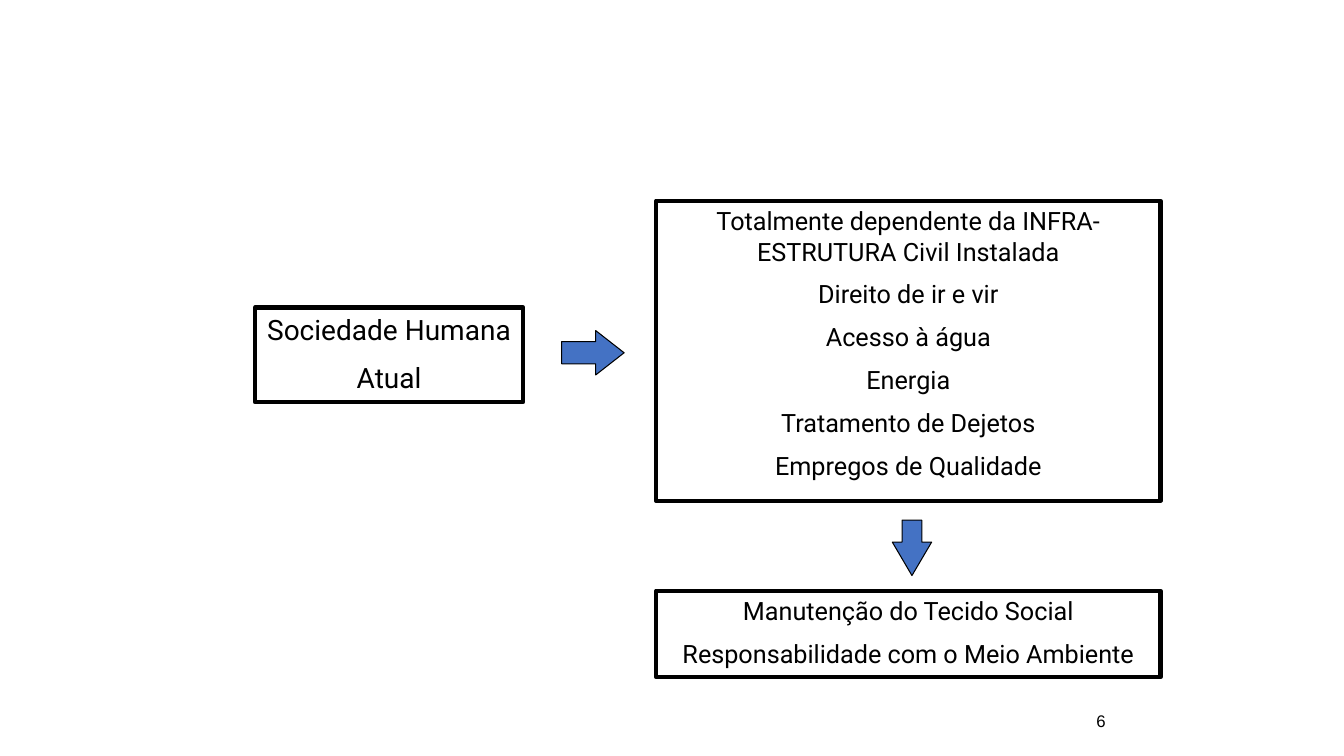
import pptx
import pptx.util
import pptx.dml.color
import pptx.enum.shapes
import pptx.enum.text

Inches = pptx.util.Inches
Pt = pptx.util.Pt
SHAPES = pptx.enum.shapes.MSO_SHAPE
ANCHOR = pptx.enum.text.MSO_ANCHOR

BLACK = "000000"
BLUE = "4472C4"


def color(value):
    """Turn a hex string into a colour."""
    return pptx.dml.color.RGBColor.from_string(value)


def write_text(box, lines, size, font="Roboto", anchor=ANCHOR.TOP):
    """Write centred paragraphs, half a line apart, into a box."""
    frame = box.text_frame
    frame.word_wrap = True
    frame.vertical_anchor = anchor
    for index, line in enumerate(lines):
        para = frame.paragraphs[0] if index == 0 else frame.add_paragraph()
        para.alignment = pptx.enum.text.PP_ALIGN.CENTER
        if index:
            para.space_before = Pt(size / 2)
        span = para.add_run()
        span.text = line
        span.font.name = font
        span.font.size = Pt(size)
        span.font.color.rgb = color(BLACK)


def add_outlined(page, kind, area, line_width, fill=None):
    """Draw a black-outlined shape in the given area."""
    shape = page.shapes.add_shape(kind, *map(Inches, area))
    shape.shadow.inherit = False
    shape.line.color.rgb = color(BLACK)
    shape.line.width = Pt(line_width)
    if fill:
        shape.fill.solid()
        shape.fill.fore_color.rgb = color(fill)
    else:
        shape.fill.background()
    return shape


def add_concept(page, area, lines, size=18):
    """Draw a framed box of centred lines."""
    box = add_outlined(page, SHAPES.RECTANGLE, area, 3)
    write_text(box, lines, size)


def add_arrow(page, kind, area, head):
    """Draw a blue block arrow with the given head length."""
    arrow = add_outlined(page, kind, area, 0.75, BLUE)
    arrow.adjustments[0] = 0.5
    arrow.adjustments[1] = head


def add_page_number(page, area, number):
    """Write the page number in the middle of its area."""
    box = page.shapes.add_textbox(*map(Inches, area))
    write_text(box, [number], 12, font="Arial", anchor=ANCHOR.MIDDLE)


def add_society_diagram(page, left, top):
    """Draw the society, infrastructure and outcome boxes with their arrows."""
    right = left + 3.98
    add_concept(page, (left, top + 1.06, 2.66, 0.94),
                ["Sociedade Humana", "Atual"], size=20)
    add_concept(page, (right, top, 5, 2.98), [
        "Totalmente dependente da INFRA-ESTRUTURA Civil Instalada",
        "Direito de ir e vir",
        "Acesso à água",
        "Energia",
        "Tratamento de Dejetos",
        "Empregos de Qualidade",
    ])
    add_concept(page, (right, top + 3.87, 5, 0.86), [
        "Manutenção do Tecido Social",
        "Responsabilidade com o Meio Ambiente",
    ])
    add_arrow(page, SHAPES.RIGHT_ARROW, (left + 3.04, top + 1.29, 0.62, 0.44), 0.64)
    add_arrow(page, SHAPES.DOWN_ARROW, (right + 2.34, top + 3.17, 0.39, 0.55), 0.85)


def main():
    """Build and save the deck."""
    deck = pptx.Presentation()
    deck.slide_width = Inches(13.33)
    deck.slide_height = Inches(7.5)
    page = deck.slides.add_slide(deck.slide_layouts[6])
    add_page_number(page, (9.42, 6.95, 3, 0.4), "6")
    add_society_diagram(page, 2.53, 1.99)
    deck.save("out.pptx")


if __name__ == "__main__":
    main()
